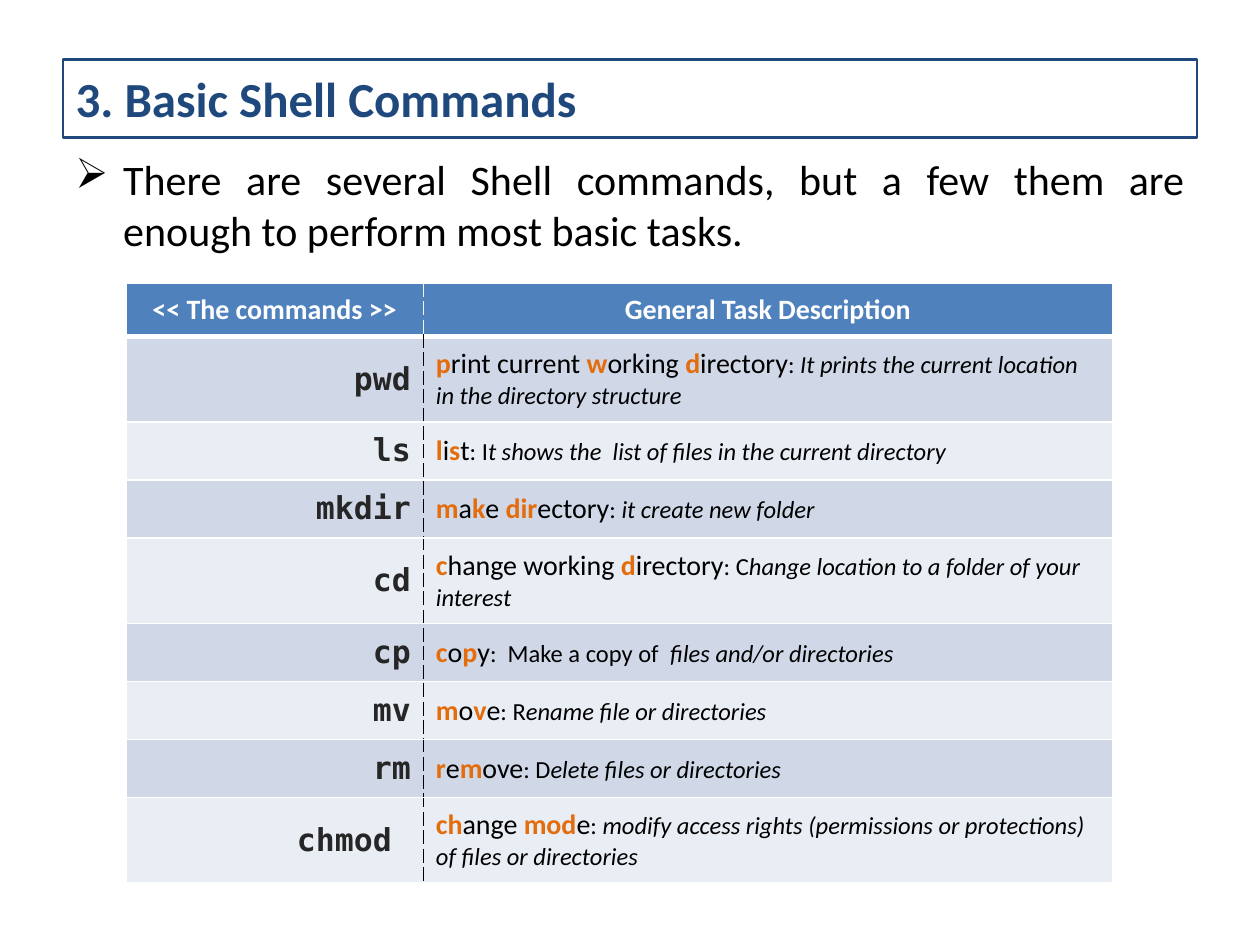
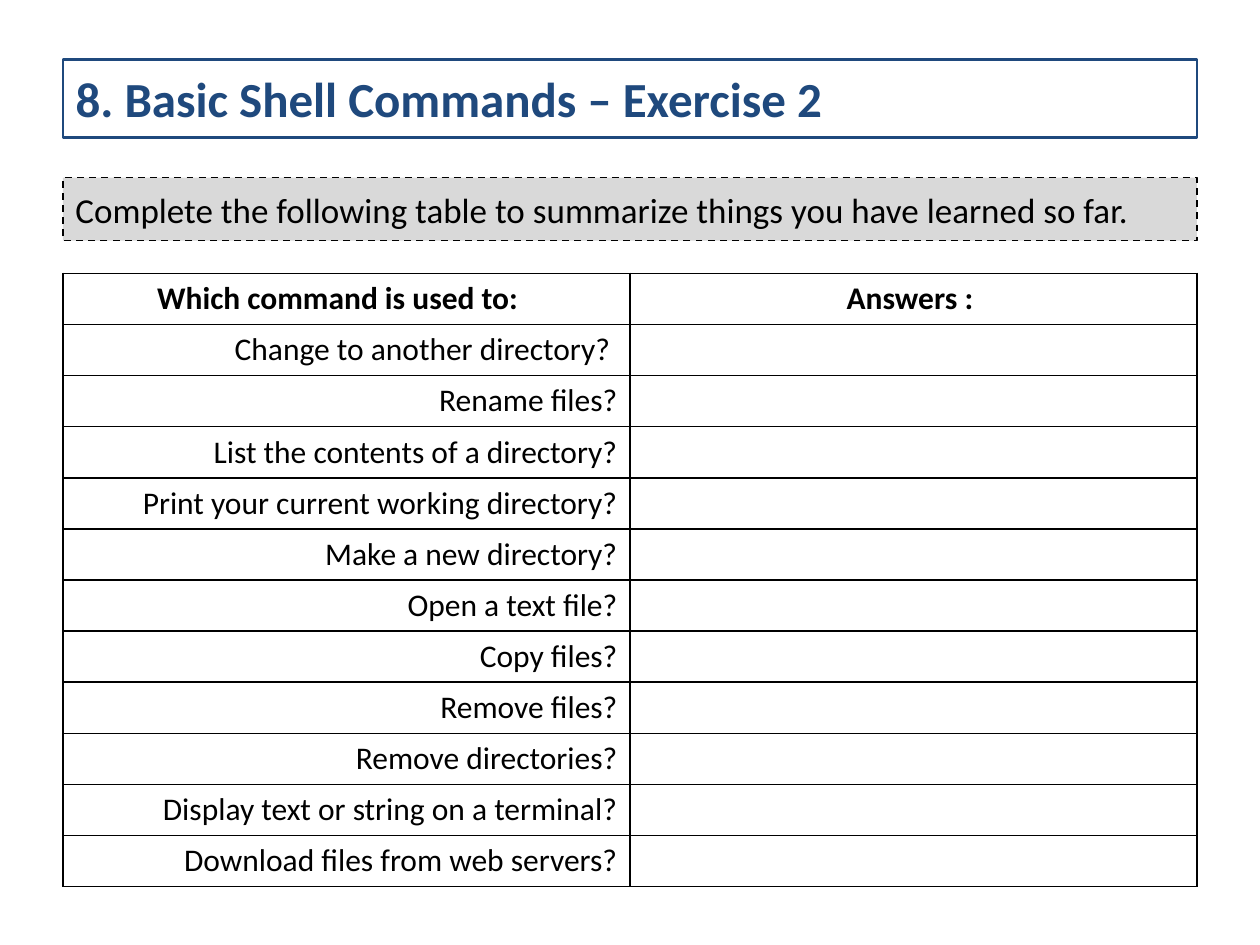
from lxml import etree
from pptx import Presentation
from pptx.dml.color import RGBColor
from pptx.enum.dml import MSO_LINE
from pptx.enum.shapes import MSO_SHAPE
from pptx.enum.text import MSO_ANCHOR, MSO_AUTO_SIZE, PP_ALIGN
from pptx.oxml.ns import qn
from pptx.util import Inches, Pt

LEFT, CENTER, RIGHT, JUSTIFY = (PP_ALIGN.LEFT, PP_ALIGN.CENTER,
                                PP_ALIGN.RIGHT, PP_ALIGN.JUSTIFY)
TOP, MIDDLE = MSO_ANCHOR.TOP, MSO_ANCHOR.MIDDLE

NAVY, BLUE, ORANGE = "1F497D", "4F81BD", "E46C0A"
BLACK, WHITE, CHARCOAL = "000000", "FFFFFF", "262626"
GREY, LIGHT_GREY = "D9D9D9", "F2F2F2"
BANDS = ("D0D8E8", "E9EDF4")

BASE = {"name": "Calibri", "bold": False, "italic": False}
TITLE = {**BASE, "size": Pt(28), "bold": True, "color": NAVY}
BULLET = {**BASE, "size": Pt(24), "color": BLACK}
PROMPT = {**BASE, "size": Pt(20), "color": BLACK}
TABLE_HEAD = {**BASE, "size": Pt(16), "bold": True, "color": WHITE}
COMMAND = {"name": "DejaVu Sans Mono", "size": Pt(18), "bold": True, "color": CHARCOAL}
TASK = {**BASE, "size": Pt(16), "color": BLACK}
TASK_KEY = {**TASK, "bold": True, "color": ORANGE}
DETAIL = {**TASK, "size": Pt(14)}
DETAIL_ITALIC = {**DETAIL, "italic": True}
QUESTION = {**BASE, "size": Pt(18), "color": BLACK}
QUESTION_HEAD = {**QUESTION, "bold": True}

# Command, task with its key letters between asterisks, upright and italic detail, row height
COMMANDS = [
    ("pwd", "*p*rint current *w*orking *d*irectory", ": ",
     "It prints the current location in the directory structure", 0.68),
    ("ls", "*l*i*s*t", ": I", "t shows the  list of files in the current directory", 0.46),
    ("mkdir", "*m*a*k*e *dir*ectory", ": ", "it create new folder", 0.46),
    ("cd", "*c*hange working *d*irectory", ": C",
     "hange location to a folder of your interest", 0.68),
    ("cp", "*c*o*p*y", ":  Make a copy of ", " files and/or directories", 0.46),
    ("mv", "*m*o*v*e", ": R", "ename file or directories", 0.46),
    ("rm", "*r*e*m*ove", ": D", "elete files or directories", 0.46),
    ("chmod ", "*ch*ange *mod*e", ": ",
     "modify access rights (permissions or protections) of files or directories", 0.68),
]

QUESTIONS = [
    "Change to another directory? ",
    "Rename files?",
    "List the contents of a directory?",
    "Print your current working directory?",
    "Make a new directory?",
    "Open a text file?",
    "Copy files?",
    "Remove files?",
    "Remove directories?",
    "Display text or string on a terminal?",
    "Download files from web servers?",
]


def rgb(color):
    return RGBColor.from_string(color)


def write(tf, runs, align=LEFT, anchor=MIDDLE):
    """Fill the first paragraph with (text, format) runs."""
    tf.vertical_anchor = anchor
    p = tf.paragraphs[0]
    p.alignment = align
    for text, style in runs:
        r = p.add_run()
        r.text = text
        for key, value in style.items():
            if key == "color":
                r.font.color.rgb = rgb(value)
            else:
                setattr(r.font, key, value)
    return p


def place(shape, x, y, w, h):
    shape.left, shape.top, shape.width, shape.height = map(Inches, (x, y, w, h))


def outline(shape, color, width, dash=None):
    shape.line.color.rgb = rgb(color)
    shape.line.width = Pt(width)
    if dash:
        shape.line.dash_style = dash


def add_titled_slide(prs, title):
    s = prs.slides.add_slide(prs.slide_layouts[5])
    sp = s.shapes.title
    place(sp, 0.5, 0.47, 9, 0.62)
    outline(sp, NAVY, 1.5)
    sp.text_frame.auto_size = MSO_AUTO_SIZE.NONE
    write(sp.text_frame, [(title, TITLE)])
    return s


def add_bullet(s, text, box):
    sp = s.shapes.add_textbox(*map(Inches, box))
    tf = sp.text_frame
    tf.word_wrap = True
    p = write(tf, [(text, BULLET)], JUSTIFY, TOP)
    pPr = p._p.get_or_add_pPr()
    pPr.set("marL", str(Inches(0.38)))
    pPr.set("indent", str(-Inches(0.38)))
    etree.SubElement(pPr, qn("a:buChar")).set("char", "➢")


def add_prompt(s, text, box):
    sp = s.shapes.add_shape(MSO_SHAPE.RECTANGLE, *map(Inches, box))
    sp.shadow.inherit = False
    sp.fill.solid()
    sp.fill.fore_color.rgb = rgb(GREY)
    outline(sp, BLACK, 1, MSO_LINE.DASH)
    sp.text_frame.word_wrap = True
    write(sp.text_frame, [(text, PROMPT)], JUSTIFY)


def add_plain_table(s, x, y, widths, heights):
    frame = s.shapes.add_table(len(heights), len(widths), Inches(x), Inches(y),
                               Inches(sum(widths)), Inches(sum(heights)))
    table = frame.table
    table.first_row = table.horz_banding = False
    for column, width in zip(table.columns, widths):
        column.width = Inches(width)
    for row, height in zip(table.rows, heights):
        row.height = Inches(height)
    return table


def format_cell(cell, fill, **borders):
    """Set the fill and the L, R, T and B borders, each (color, width, dash)."""
    if fill:
        cell.fill.solid()
        cell.fill.fore_color.rgb = rgb(fill)
    else:
        cell.fill.background()
    tcPr = cell._tc.get_or_add_tcPr()
    for i, side in enumerate("LRTB"):
        color, width, dash = borders[side]
        ln = etree.Element(qn("a:ln" + side), w=str(Pt(width)))
        solid = etree.SubElement(ln, qn("a:solidFill"))
        etree.SubElement(solid, qn("a:srgbClr"), val=color)
        etree.SubElement(ln, qn("a:prstDash"), val=dash)
        tcPr.insert(i, ln)


def task_runs(task, lead, detail):
    runs = [(part, TASK_KEY if i % 2 else TASK)
            for i, part in enumerate(task.split("*")) if part]
    return runs + [(lead, DETAIL), (detail, DETAIL_ITALIC)]


def add_command_table(s):
    heights = [0.42] + [row[-1] for row in COMMANDS]
    table = add_plain_table(s, 1, 2.25, (2.36, 5.47), heights)
    thin, thick = (WHITE, 1, "solid"), (WHITE, 3, "solid")
    for row in range(len(heights)):
        fill = BANDS[(row - 1) % 2] if row else BLUE
        divider = (BLACK if row else LIGHT_GREY, 1, "dash")
        edges = {"T": thick if row == 1 else thin, "B": thin if row else thick}
        format_cell(table.cell(row, 0), fill, L=thin, R=divider, **edges)
        format_cell(table.cell(row, 1), fill, L=divider, R=thin, **edges)
    for col, text in enumerate(("<< The commands >>", "General Task Description")):
        write(table.cell(0, col).text_frame, [(text, TABLE_HEAD)], CENTER)
        table.cell(0, col).vertical_anchor = MIDDLE
    for row, (command, task, lead, detail, _) in enumerate(COMMANDS, 1):
        name, description = table.cell(row, 0), table.cell(row, 1)
        name.vertical_anchor = description.vertical_anchor = MIDDLE
        write(name.text_frame, [(command, COMMAND)], RIGHT)
        write(description.text_frame, task_runs(task, lead, detail))


def add_question_table(s):
    count = len(QUESTIONS) + 1
    table = add_plain_table(s, 0.5, 2.17, (4.5, 4.5), [4.86 / count] * count)
    line = (BLACK, 1, "solid")
    for cell in table.iter_cells():
        format_cell(cell, None, L=line, R=line, T=line, B=line)
    for col, text in enumerate(("Which command is used to:", "Answers : ")):
        write(table.cell(0, col).text_frame, [(text, QUESTION_HEAD)], CENTER)
    table.cell(0, 0).margin_right = Inches(0.24)
    for row, question in enumerate(QUESTIONS, 1):
        write(table.cell(row, 0).text_frame, [(question, QUESTION)], RIGHT)


def main():
    prs = Presentation()
    prs.slide_width, prs.slide_height = Inches(10), Inches(7.5)

    s = add_titled_slide(prs, "3. Basic Shell Commands")
    add_command_table(s)
    add_bullet(s, "There are several Shell commands, but a few them are "
                  "enough to perform most basic tasks.", (0.5, 1.17, 9, 0.91))

    s = add_titled_slide(prs, "8. Basic Shell Commands – Exercise 2")
    add_prompt(s, "Complete the following table to summarize things you have "
                  "learned so far.", (0.5, 1.41, 9, 0.5))
    add_question_table(s)

    prs.save("out.pptx")


if __name__ == "__main__":
    main()
